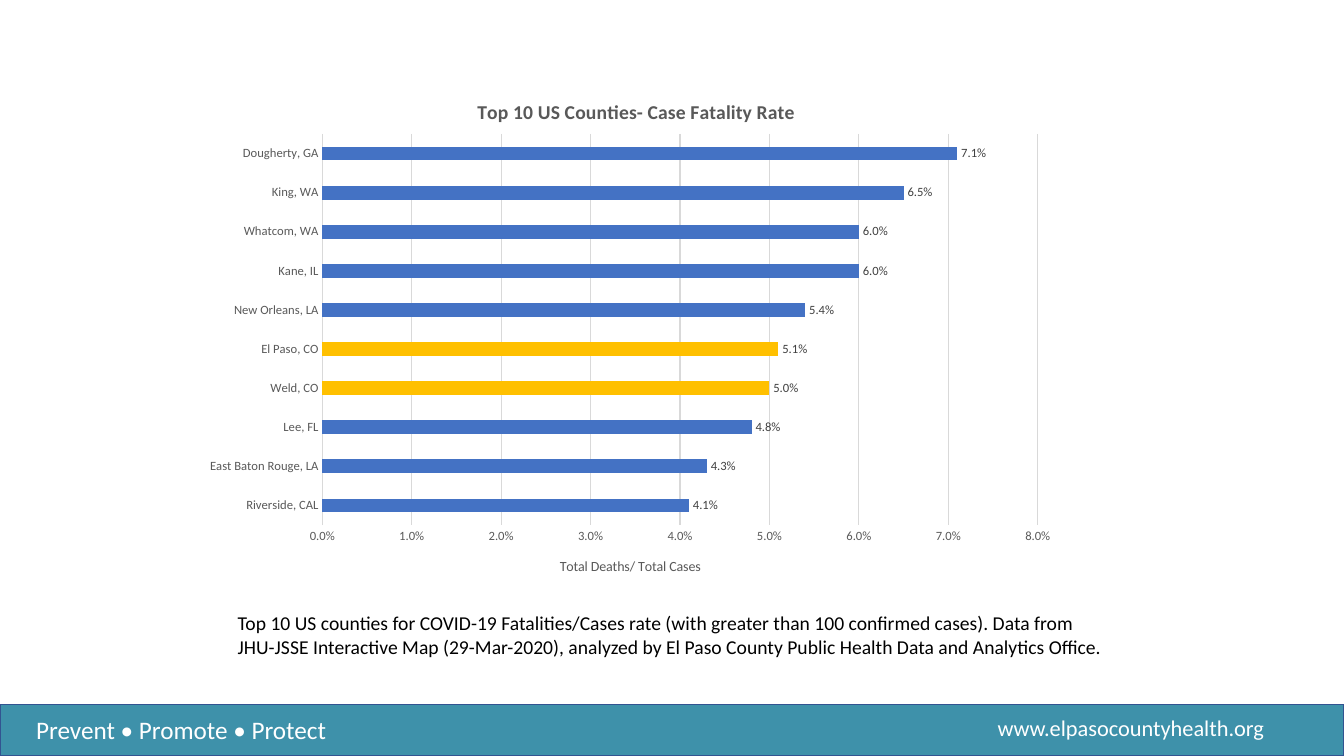
from typing import NamedTuple

from lxml import etree
from pptx import Presentation
from pptx import util as u
from pptx.chart.data import CategoryChartData
from pptx.dml.color import RGBColor
from pptx.enum import chart as ch, shapes, text
from pptx.oxml import parse_xml
from pptx.oxml.ns import nsdecls

FONT = "Calibri"
BLACK = RGBColor(0x00, 0x00, 0x00)
WHITE = RGBColor(0xFF, 0xFF, 0xFF)
DARK_GREY = RGBColor(0x40, 0x40, 0x40)
GREY = RGBColor(0x59, 0x59, 0x59)
LIGHT_GREY = RGBColor(0xD9, 0xD9, 0xD9)
BLUE = RGBColor(0x44, 0x72, 0xC4)
GOLD = RGBColor(0xFF, 0xC0, 0x00)
TEAL = RGBColor(0x3E, 0x91, 0xAA)
NAVY = RGBColor(0x32, 0x54, 0x91)
PERCENT = "0.0%"


class County(NamedTuple):
    name: str
    rate: float
    color: RGBColor = BLUE


class Label(NamedTuple):
    words: str
    left: float
    top: float
    width: float
    height: float
    size: int
    color: RGBColor


# Listed from the bottom bar to the top bar
COUNTIES = [
    County("Riverside, CAL", 0.041),
    County("East Baton Rouge, LA", 0.043),
    County("Lee, FL", 0.048),
    County("Weld, CO", 0.050, GOLD),
    County("El Paso, CO", 0.051, GOLD),
    County("New Orleans, LA", 0.054),
    County("Kane, IL", 0.060),
    County("Whatcom, WA", 0.060),
    County("King, WA", 0.065),
    County("Dougherty, GA", 0.071),
]

LABELS = [
    Label("Top 10 US counties for COVID-19 Fatalities/Cases rate (with greater than "
          "100 confirmed cases). Data from JHU-JSSE Interactive Map (29-Mar-2020), "
          "analyzed by El Paso County Public Health Data and Analytics Office.",
          5.74, 15.27, 22.4, 2.64, 14, BLACK),
    Label("Prevent • Promote • Protect", 0.66, 17.88, 9.63, 1.02, 18, WHITE),
    Label("www.elpasocountyhealth.org", 24.89, 17.88, 8.51, 0.94, 16, WHITE),
]


def set_font(font, size: float, color: RGBColor, bold: bool = False) -> None:
    font.name, font.size, font.bold = FONT, u.Pt(size), bold
    font.color.rgb = color


def add_run(paragraph, words: str, size: float, color: RGBColor, bold: bool = False) -> None:
    run = paragraph.add_run()
    run.text = words
    set_font(run.font, size, color, bold)


def manual_layout(target: str, **fractions: float) -> etree._Element:
    modes = "".join(f'<c:{axis}Mode val="edge"/>' for axis in "xy")
    sizes = "".join(f'<c:{key} val="{value}"/>' for key, value in fractions.items())
    return parse_xml(f'<c:layout {nsdecls("c")}><c:manualLayout>{target}{modes}{sizes}'
                     '</c:manualLayout></c:layout>')


def replace_layout(parent, layout: etree._Element, position: int) -> None:
    for old in parent.findall(layout.tag):
        parent.remove(old)
    parent.insert(position, layout)


def add_rate_chart(slide) -> None:
    data = CategoryChartData(number_format=PERCENT)
    data.categories = [county.name for county in COUNTIES]
    data.add_series("Case fatality rate", [county.rate for county in COUNTIES])
    rates = slide.shapes.add_chart(ch.XL_CHART_TYPE.BAR_CLUSTERED, u.Cm(4.88), u.Cm(1.85),
                                   u.Cm(22.07), u.Cm(13.16), data).chart
    set_font(rates.font, 10, BLACK)
    rates.has_legend = False
    rates.has_title = True
    add_run(rates.chart_title.text_frame.paragraphs[0],
            "Top 10 US Counties- Case Fatality Rate", 14, GREY, True)
    rates.chart_title.include_in_layout = False

    # Bars and their values
    plot = rates.plots[0]
    plot.gap_width = 182
    plot.vary_by_categories = False
    bars = plot.series[0]
    bars.format.fill.solid()
    bars.format.fill.fore_color.rgb = BLUE
    for index, county in enumerate(COUNTIES):
        if county.color != BLUE:
            fill = bars.points[index].format.fill
            fill.solid()
            fill.fore_color.rgb = county.color
    values = bars.data_labels
    values.show_value = True
    values.number_format, values.number_format_is_linked = PERCENT, False
    values.position = ch.XL_LABEL_POSITION.OUTSIDE_END
    set_font(values.font, 9, DARK_GREY)

    # Axes
    county_axis, rate_axis = rates.category_axis, rates.value_axis
    for axis in (county_axis, rate_axis):
        axis.major_tick_mark = axis.minor_tick_mark = ch.XL_TICK_MARK.NONE
        set_font(axis.tick_labels.font, 9, GREY)
    county_axis.has_major_gridlines = False
    rate_axis.has_major_gridlines = True
    for line in (county_axis.format.line, rate_axis.major_gridlines.format.line):
        line.color.rgb = LIGHT_GREY
        line.width = u.Pt(0.75)
    rate_axis.format.line.fill.background()
    rate_axis.minimum_scale, rate_axis.maximum_scale, rate_axis.major_unit = 0, 0.08, 0.01
    rate_axis.tick_labels.number_format = PERCENT
    rate_axis.tick_labels.number_format_is_linked = False
    rate_axis.has_title = True
    add_run(rate_axis.axis_title.text_frame.paragraphs[0],
            "Total Deaths/ Total Cases", 10, GREY)

    # Places of the title and the plot inside the chart
    replace_layout(rates.chart_title._element, manual_layout("", x=0.32, y=0.04), 1)
    plot_area = plot._element.getparent()
    inner = manual_layout('<c:layoutTarget val="inner"/>', x=0.147, y=0.116, w=0.817, h=0.749)
    replace_layout(plot_area, inner, 0)


def add_footer_band(slide) -> None:
    band = slide.shapes.add_shape(shapes.MSO_SHAPE.RECTANGLE, u.Cm(0), u.Cm(17.75),
                                  u.Cm(33.87), u.Cm(1.3))
    band.shadow.inherit = False
    band.fill.solid()
    band.fill.fore_color.rgb = TEAL
    band.line.color.rgb = NAVY
    band.line.width = u.Pt(1)


def add_label(slide, label: Label) -> None:
    place = map(u.Cm, (label.left, label.top, label.width, label.height))
    frame = slide.shapes.add_textbox(*place).text_frame
    frame.word_wrap = True
    frame.auto_size = text.MSO_AUTO_SIZE.SHAPE_TO_FIT_TEXT
    add_run(frame.paragraphs[0], label.words, label.size, label.color)


def main() -> None:
    deck = Presentation()
    deck.slide_width, deck.slide_height = u.Cm(33.87), u.Cm(19.05)
    slide = deck.slides.add_slide(deck.slide_layouts[6])
    add_rate_chart(slide)
    add_footer_band(slide)
    for label in LABELS:
        add_label(slide, label)
    deck.save("out.pptx")


if __name__ == "__main__":
    main()
